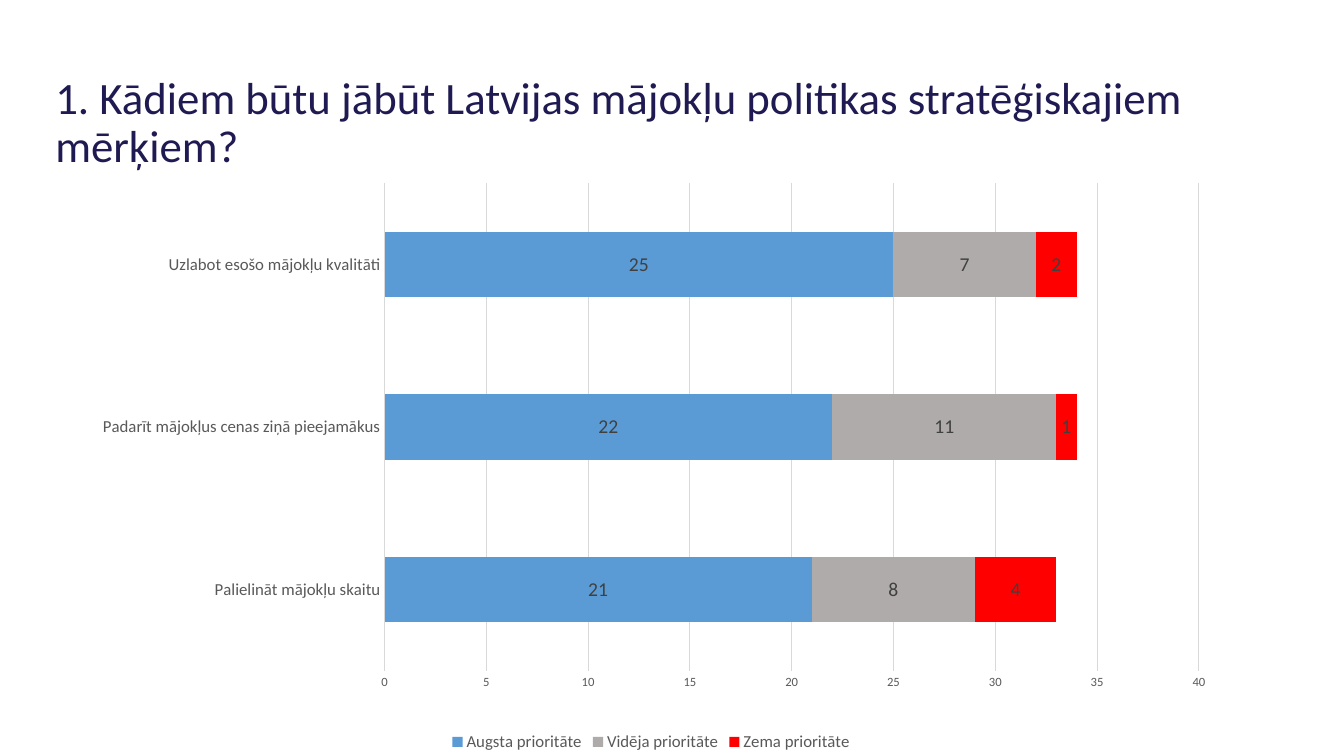
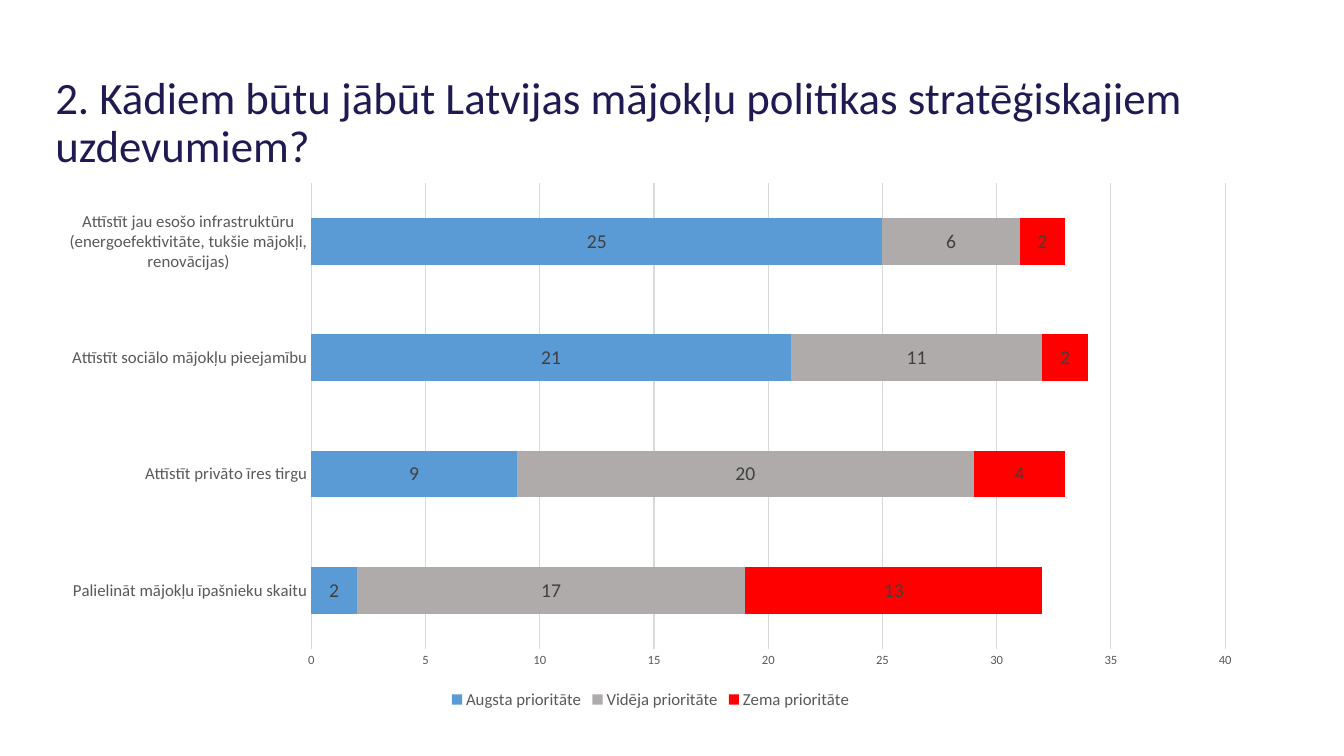
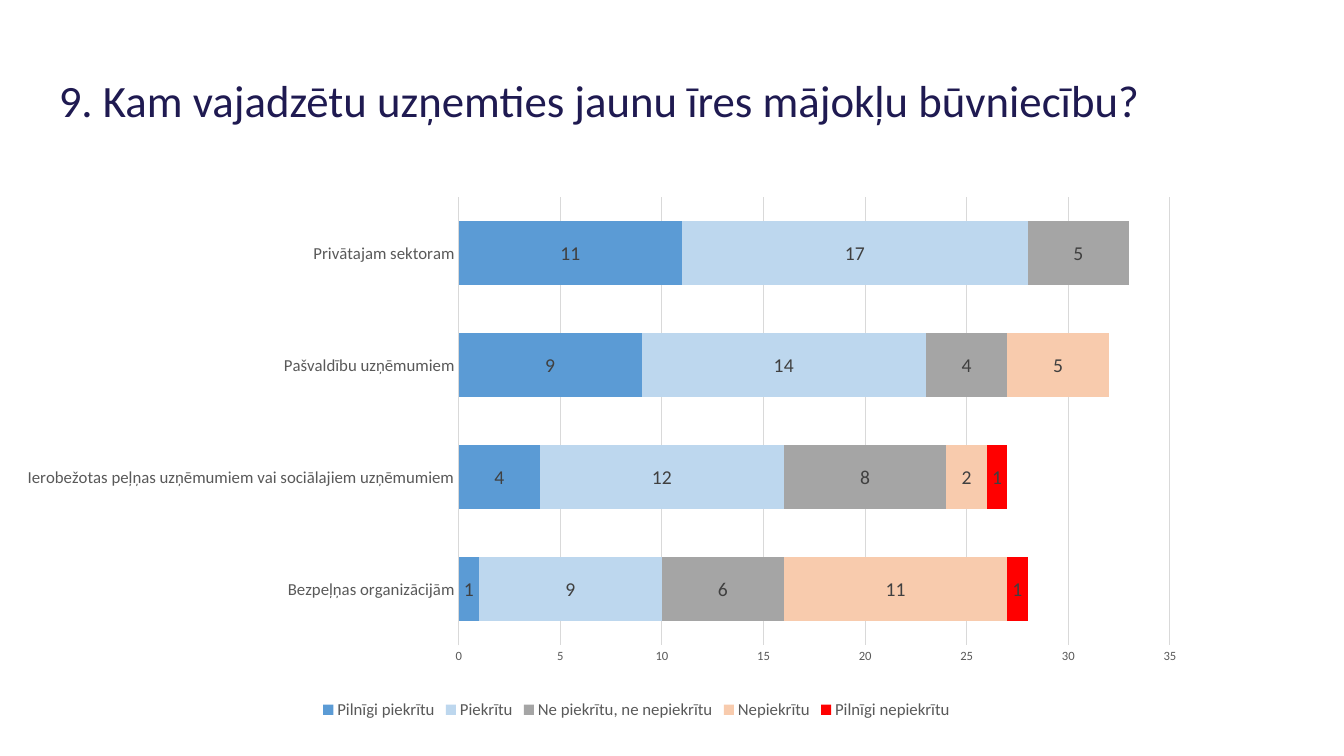
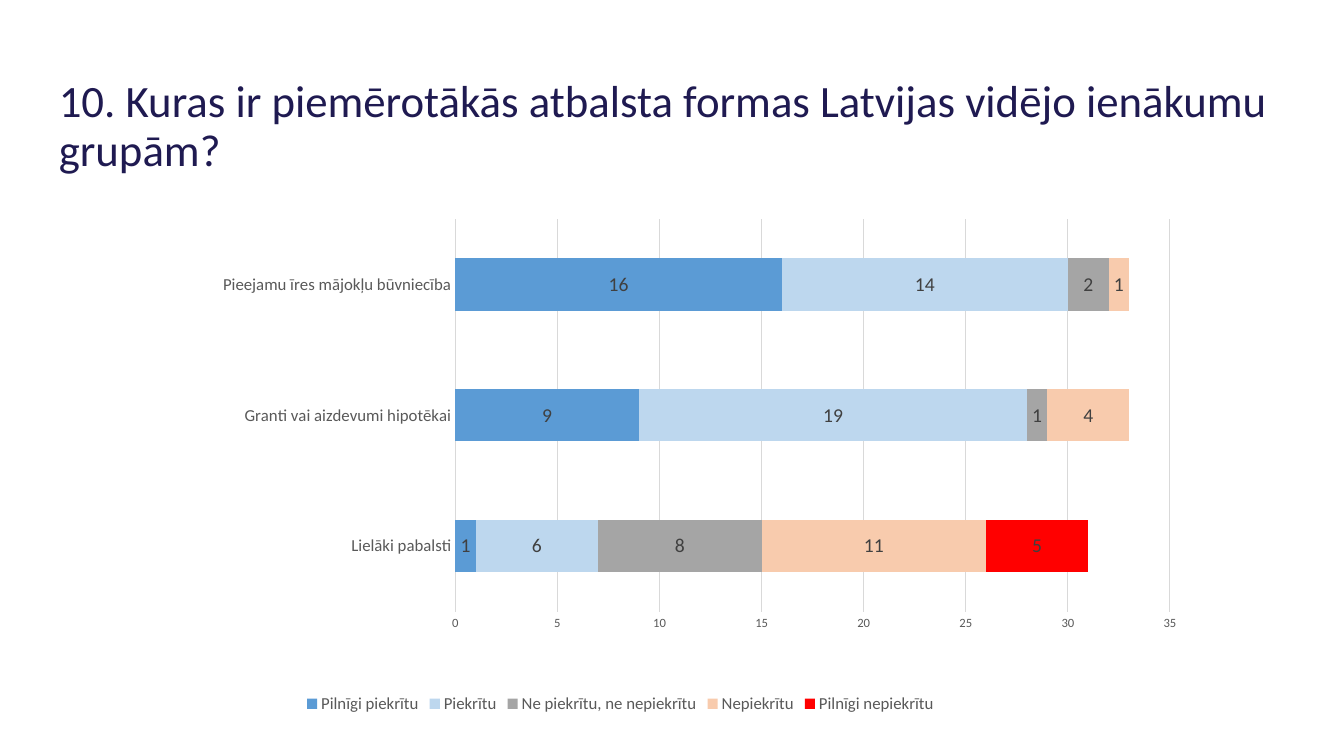
import pptx
import pptx.chart.data
import pptx.dml.color
import pptx.enum.chart
import pptx.enum.text
import pptx.util
from lxml import etree

Pt = pptx.util.Pt
XL = pptx.enum.chart

FONT = "Calibri"
NAVY, GREY, DARK, GRID = "1F1A51", "595959", "404040", "D9D9D9"

# Answer scales: series name and bar colour
PRIORITY = [
    ("Augsta prioritāte", "5B9BD5"),
    ("Vidēja prioritāte", "AFABAB"),
    ("Zema prioritāte", "FF0000"),
]
AGREEMENT = [
    ("Pilnīgi piekrītu", "5B9BD5"),
    ("Piekrītu", "BDD7EE"),
    ("Ne piekrītu, ne nepiekrītu", "A5A5A5"),
    ("Nepiekrītu", "F8CBAD"),
    ("Pilnīgi nepiekrītu", "FF0000"),
]


def rgb(value):
    return pptx.dml.color.RGBColor.from_string(value)


class Deck:
    """Holds the shared style and the current slide."""

    def __init__(self):
        self.prs = pptx.Presentation()
        self.prs.slide_width, self.prs.slide_height = Pt(960), Pt(540)
        self.s = None

    def slide(self):
        self.s = self.prs.slides.add_slide(self.prs.slide_layouts[6])

    def style(self, font, size, color):
        font.name, font.size = FONT, Pt(size)
        font.color.rgb = rgb(color)

    def title(self, text, inset):
        tf = self.s.shapes.add_textbox(Pt(32.4), Pt(46.8), Pt(894.2), Pt(60.5)).text_frame
        tf.word_wrap = True
        tf.vertical_anchor = pptx.enum.text.MSO_ANCHOR.TOP
        tf.margin_left = tf.margin_right = tf.margin_top = tf.margin_bottom = Pt(inset)
        p = tf.paragraphs[0]
        p.text = text
        p.line_spacing = 0.9
        self.style(p.font, 32, NAVY)

    def stacked_bars(self, box, scale, rows, axis_max, gap=150, plot_box=None):
        """Draw stacked bars; rows map each category, bottom first, to its values."""
        data = pptx.chart.data.CategoryChartData()
        data.categories = list(rows)
        for (name, _), values in zip(scale, zip(*rows.values())):
            data.add_series(name, values)
        chart = self.s.shapes.add_chart(
            XL.XL_CHART_TYPE.BAR_STACKED, *map(Pt, box), data).chart
        chart.has_title = False
        self.style(chart.font, 10, "000000")

        # Bars and their labels; the number format hides zeros
        plot = chart.plots[0]
        plot.gap_width, plot.overlap, plot.vary_by_categories = gap, 100, False
        for series, (_, color) in zip(plot.series, scale):
            series.format.fill.solid()
            series.format.fill.fore_color.rgb = rgb(color)
            labels = series.data_labels
            labels.show_value = True
            labels.position = XL.XL_LABEL_POSITION.CENTER
            labels.number_format, labels.number_format_is_linked = "0;;;", False
            self.style(labels.font, 14, DARK)

        # Axes and gridlines
        cat, val = chart.category_axis, chart.value_axis
        for axis, size in ((cat, 12), (val, 9)):
            axis.major_tick_mark = axis.minor_tick_mark = XL.XL_TICK_MARK.NONE
            self.style(axis.tick_labels.font, size, GREY)
        val.minimum_scale, val.maximum_scale, val.major_unit = 0, axis_max, 5
        val.has_major_gridlines = True
        val.format.line.fill.background()
        for line in (cat.format.line, val.major_gridlines.format.line):
            line.color.rgb = rgb(GRID)
            line.width = Pt(0.75)

        # Legend
        chart.has_legend = True
        chart.legend.position = XL.XL_LEGEND_POSITION.BOTTOM
        chart.legend.include_in_layout = False
        self.style(chart.legend.font, 12, GREY)

        if plot_box:
            self.place_plot(chart, plot_box)

    def place_plot(self, chart, plot_box):
        """Fix the inner plot area as fractions of the chart."""
        area = chart._chartSpace.chart.plotArea
        ns = "{%s}" % area.nsmap["c"]
        for old in area.findall(ns + "layout"):
            area.remove(old)
        layout = etree.Element(ns + "layout")
        area.insert(0, layout)
        manual = etree.SubElement(layout, ns + "manualLayout")
        settings = [("layoutTarget", "inner"), ("xMode", "edge"), ("yMode", "edge")]
        for tag, value in settings + list(zip("xywh", plot_box)):
            etree.SubElement(manual, ns + tag).set("val", str(value))


def main():
    deck = Deck()

    # Strategic goals
    deck.slide()
    deck.title("1. Kādiem būtu jābūt Latvijas mājokļu politikas stratēģiskajiem mērķiem?", 7.2)
    deck.stacked_bars((58.3, 130.3, 813.6, 409.7), PRIORITY, {
        "Palielināt mājokļu skaitu": (21, 8, 4),
        "Padarīt mājokļus cenas ziņā pieejamākus": (22, 11, 1),
        "Uzlabot esošo mājokļu kvalitāti": (25, 7, 2),
    }, 40, plot_box=(0.266, 0, 0.715, 0.852))

    # Strategic tasks
    deck.slide()
    deck.title("2. Kādiem būtu jābūt Latvijas mājokļu politikas stratēģiskajiem uzdevumiem?", 7.2)
    deck.stacked_bars((32.4, 123.1, 864.7, 386.6), PRIORITY, {
        "Palielināt mājokļu īpašnieku skaitu": (2, 17, 13),
        "Attīstīt privāto īres tirgu": (9, 20, 4),
        "Attīstīt sociālo mājokļu pieejamību": (21, 11, 2),
        "Attīstīt jau esošo infrastruktūru (energoefektivitāte, tukšie mājokļi, renovācijas)":
            (25, 6, 2),
    }, 40)

    # Who should build rental housing
    deck.slide()
    deck.title("9. Kam vajadzētu uzņemties jaunu īres mājokļu būvniecību?", 9.6)
    deck.stacked_bars((13.7, 117.4, 882, 399.6), AGREEMENT, {
        "Bezpeļņas organizācijām": (1, 9, 6, 11, 1),
        "Ierobežotas peļņas uzņēmumiem vai sociālajiem uzņēmumiem": (4, 12, 8, 2, 1),
        "Pašvaldību uzņēmumiem": (9, 14, 4, 5, 0),
        "Privātajam sektoram": (11, 17, 5, 0, 0),
    }, 35, gap=75, plot_box=(0.356, 0.059, 0.576, 0.801))

    # Forms of support
    deck.slide()
    deck.title("10. Kuras ir piemērotākās atbalsta formas Latvijas vidējo ienākumu grupām?", 9.6)
    deck.stacked_bars((0, 131.8, 886.3, 380.9), AGREEMENT, {
        "Lielāki pabalsti": (1, 6, 8, 11, 5),
        "Granti vai aizdevumi hipotēkai": (9, 19, 1, 4, 0),
        "Pieejamu īres mājokļu būvniecība": (16, 14, 2, 1, 0),
    }, 35, plot_box=(0.367, 0.065, 0.576, 0.736))

    deck.prs.save("out.pptx")


if __name__ == "__main__":
    main()
